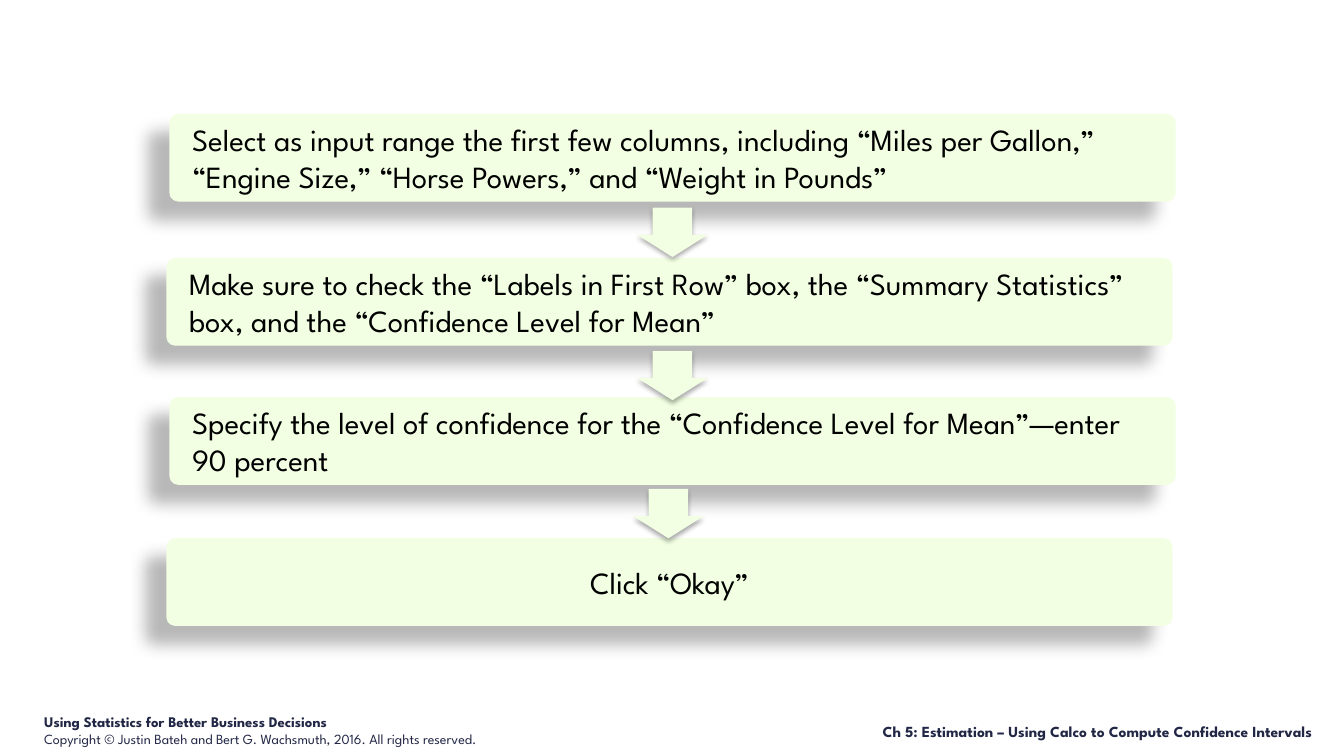
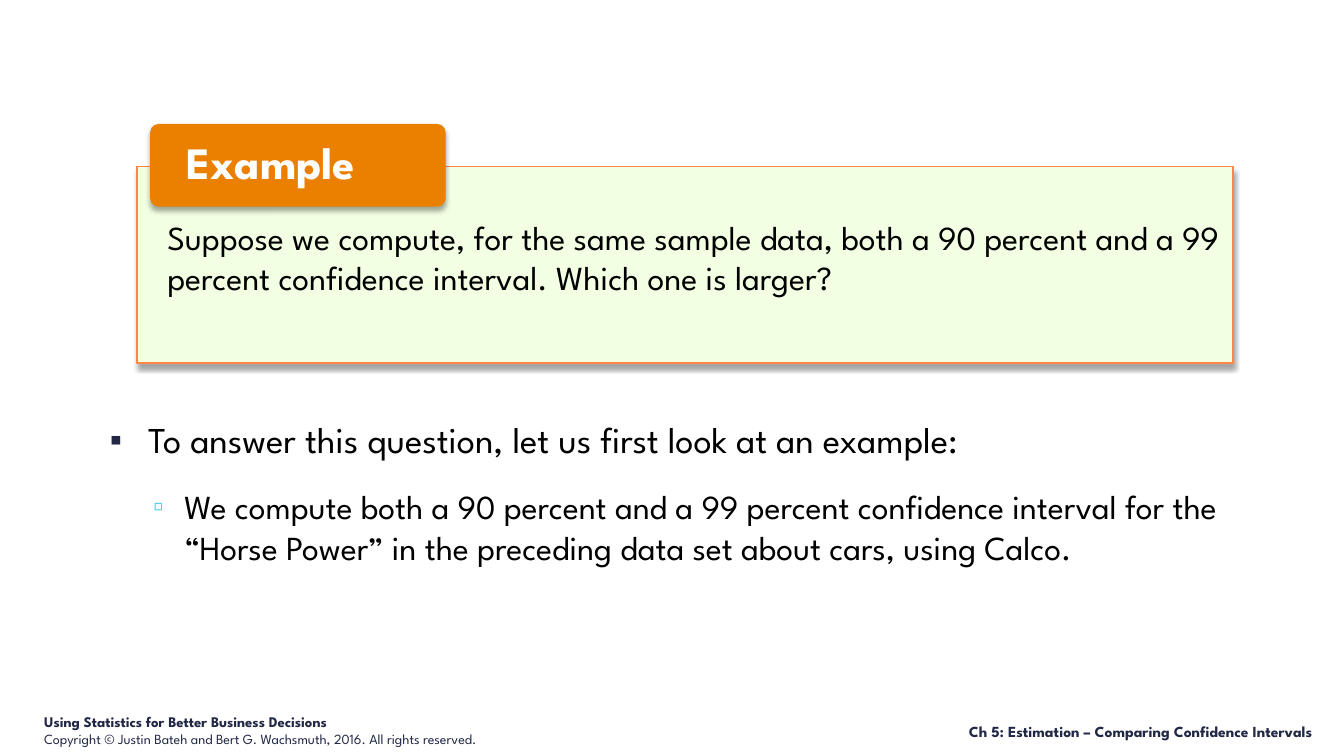
from dataclasses import dataclass
from typing import Optional

from pptx import Presentation
from pptx.dml.color import RGBColor
from pptx.enum.shapes import MSO_SHAPE
from pptx.enum.text import MSO_ANCHOR, PP_ALIGN
from pptx.oxml import parse_xml
from pptx.oxml.ns import nsdecls, qn
from pptx.util import Inches, Pt

RECTANGLE = MSO_SHAPE.RECTANGLE
ROUNDED = MSO_SHAPE.ROUNDED_RECTANGLE
DOWN_ARROW = MSO_SHAPE.DOWN_ARROW
TOP, MIDDLE, BOTTOM = MSO_ANCHOR.TOP, MSO_ANCHOR.MIDDLE, MSO_ANCHOR.BOTTOM
LEFT, CENTER, RIGHT = PP_ALIGN.LEFT, PP_ALIGN.CENTER, PP_ALIGN.RIGHT

FONT = "League Spartan"
BLACK = RGBColor(0x00, 0x00, 0x00)
WHITE = RGBColor(0xFF, 0xFF, 0xFF)
NAVY = RGBColor(0x21, 0x27, 0x45)
PALE_GREEN = RGBColor(0xF2, 0xFF, 0xE3)
ORANGE = RGBColor(0xEB, 0x80, 0x00)
CORAL = RGBColor(0xFF, 0x86, 0x43)
SKY = RGBColor(0x5E, 0xCC, 0xF3)

STEP_WIDTH, STEP_HEIGHT = 9.98, 0.87
ARROW_WIDTH, ARROW_HEIGHT = 0.7, 0.49
DEFAULT_INSETS = (0.1, 0.05, 0.1, 0.05)
STEP_INSETS = (0.2, 0.1, 0.2, 0.1)


@dataclass(frozen=True)
class Box:
    left: float
    top: float
    width: float
    height: float

    def lengths(self):
        return tuple(Inches(v) for v in (self.left, self.top, self.width, self.height))


@dataclass(frozen=True)
class Shadow:
    opacity: int
    blur: float
    distance: float
    angle: int


@dataclass(frozen=True)
class Bullet:
    char: str
    color: RGBColor
    percent: int
    margin: float
    indent: float


@dataclass(frozen=True)
class Line:
    text: str
    size: float
    color: RGBColor = BLACK
    bold: bool = False
    align: PP_ALIGN = LEFT
    before: float = 0
    after: float = 0
    spacing: float = 1.0
    level: int = 0
    bullet: Optional[Bullet] = None


@dataclass(frozen=True)
class Step:
    left: float
    top: float
    text: str
    align: PP_ALIGN = LEFT


@dataclass(frozen=True)
class Arrow:
    left: float
    top: float


STEP_SHADOW = Shadow(28, 11.8, 19.7, 141)
ARROW_SHADOW = Shadow(32, 3.5, 2.2, 90)
PANEL_SHADOW = Shadow(35, 4, 3, 90)

STEPS = (
    Step(1.68, 1.13, "Select as input range the first few columns, including “Miles per Gallon,” "
                     "“Engine Size,” “Horse Powers,” and “Weight in Pounds”"),
    Step(1.65, 2.56, "Make sure to check the “Labels in First Row” box, the “Summary Statistics” "
                     "box, and the “Confidence Level for Mean”"),
    Step(1.68, 3.94, "Specify the level of confidence for the “Confidence Level for Mean”—enter "
                     "90 percent"),
    Step(1.65, 5.34, "Click “Okay”", CENTER),
)
ARROWS = (Arrow(6.32, 2.06), Arrow(6.32, 3.48), Arrow(6.28, 4.85))

FOOTER = (
    Line("Using Statistics for Better Business Decisions", 10.5, NAVY, bold=True),
    Line("Copyright © Justin Bateh and Bert G. Wachsmuth, 2016. All rights reserved.",
         10, NAVY, after=1),
)
QUESTION = Line("Suppose we compute, for the same sample data, both a 90 percent and a 99 "
                "percent confidence interval. Which one is larger?", 24, before=6, after=12)
ANSWER = (
    Line("To answer this question, let us first look at an example:", 26, before=6, after=12,
         bullet=Bullet("▪", NAVY, 95, 0.45, -0.38)),
    Line("We compute both a 90 percent and a 99 percent confidence interval for the "
         "“Horse Power” in the preceding data set about cars, using Calco.", 24,
         before=6, after=12, level=1, bullet=Bullet("▫", SKY, 90, 0.81, -0.31)),
)


def add_bullet(paragraph, bullet: Bullet) -> None:
    properties = paragraph._p.get_or_add_pPr()
    properties.set("marL", str(Inches(bullet.margin)))
    properties.set("indent", str(Inches(bullet.indent)))
    ns = nsdecls("a")
    for xml in (
        f'<a:buClr {ns}><a:srgbClr val="{bullet.color}"/></a:buClr>',
        f'<a:buSzPct {ns} val="{bullet.percent * 1000}"/>',
        f'<a:buFont {ns} typeface="Arial"/>',
        f'<a:buChar {ns} char="{bullet.char}"/>',
    ):
        properties.append(parse_xml(xml))


def write(shape, lines, insets=DEFAULT_INSETS, anchor=TOP) -> None:
    frame = shape.text_frame
    frame.word_wrap = True
    frame.vertical_anchor = anchor
    (frame.margin_left, frame.margin_top,
     frame.margin_right, frame.margin_bottom) = (Inches(v) for v in insets)
    for index, line in enumerate(lines):
        paragraph = frame.add_paragraph() if index else frame.paragraphs[0]
        paragraph.alignment = line.align
        paragraph.level = line.level
        paragraph.line_spacing = line.spacing
        paragraph.space_before = Pt(line.before)
        paragraph.space_after = Pt(line.after)
        if line.bullet:
            add_bullet(paragraph, line.bullet)
        run = paragraph.add_run()
        run.text = line.text
        run.font.name = FONT
        run.font.size = Pt(line.size)
        run.font.bold = line.bold
        run.font.color.rgb = line.color


def add_text(slide, box: Box, lines, anchor=TOP) -> None:
    write(slide.shapes.add_textbox(*box.lengths()), lines, anchor=anchor)


def add_block(slide, kind, box: Box, fill: RGBColor, shadow: Shadow, adjustments=()):
    shape = slide.shapes.add_shape(kind, *box.lengths())
    for index, value in enumerate(adjustments):
        shape.adjustments[index] = value
    shape.fill.solid()
    shape.fill.fore_color.rgb = fill
    shape.line.fill.background()
    shape.shadow.inherit = False
    effects = shape._element.spPr.find(qn("a:effectLst"))
    effects.append(parse_xml(
        f'<a:outerShdw {nsdecls("a")} blurRad="{Pt(shadow.blur)}" dist="{Pt(shadow.distance)}" '
        f'dir="{shadow.angle * 60000}" rotWithShape="0"><a:srgbClr val="{BLACK}">'
        f'<a:alpha val="{shadow.opacity * 1000}"/></a:srgbClr></a:outerShdw>'))
    return shape


def add_slide(deck, topic: str):
    slide = deck.slides.add_slide(deck.slide_layouts[6])
    add_text(slide, Box(0.34, 7.02, 5.28, 0.4), FOOTER)
    chapter = Line(f"Ch 5: Estimation – {topic}", 11, NAVY, bold=True, align=RIGHT)
    add_text(slide, Box(6.5, 7.11, 6.62, 0.29), (chapter,), BOTTOM)
    return slide


def build_steps(deck) -> None:
    slide = add_slide(deck, "Using Calco to Compute Confidence Intervals")
    for step in STEPS:
        card = add_block(slide, ROUNDED, Box(step.left, step.top, STEP_WIDTH, STEP_HEIGHT),
                         PALE_GREEN, STEP_SHADOW, (0.1,))
        write(card, (Line(step.text, 22, align=step.align),), STEP_INSETS, MIDDLE)
    for arrow in ARROWS:
        add_block(slide, DOWN_ARROW, Box(arrow.left, arrow.top, ARROW_WIDTH, ARROW_HEIGHT),
                  PALE_GREEN, ARROW_SHADOW, (0.56, 0.45))


def build_example(deck) -> None:
    slide = add_slide(deck, "Comparing Confidence Intervals")
    panel = add_block(slide, RECTANGLE, Box(1.36, 1.65, 10.87, 1.95), PALE_GREEN, PANEL_SHADOW)
    panel.line.color.rgb = CORAL
    panel.line.width = Pt(1)
    write(panel, (QUESTION,), (0.3, 0.5, 0.1, 0))
    tab = add_block(slide, ROUNDED, Box(1.49, 1.23, 2.93, 0.82), ORANGE, PANEL_SHADOW, (0.1,))
    write(tab, (Line("Example", 32, WHITE, bold=True, spacing=0.9),),
          (0.34, 0.04, 0.34, 0.04), MIDDLE)
    add_text(slide, Box(0.92, 4.09, 11.75, 2.79), ANSWER)


def main() -> None:
    deck = Presentation()
    deck.slide_width, deck.slide_height = Inches(13.33), Inches(7.5)
    build_steps(deck)
    build_example(deck)
    deck.save("out.pptx")


if __name__ == "__main__":
    main()
